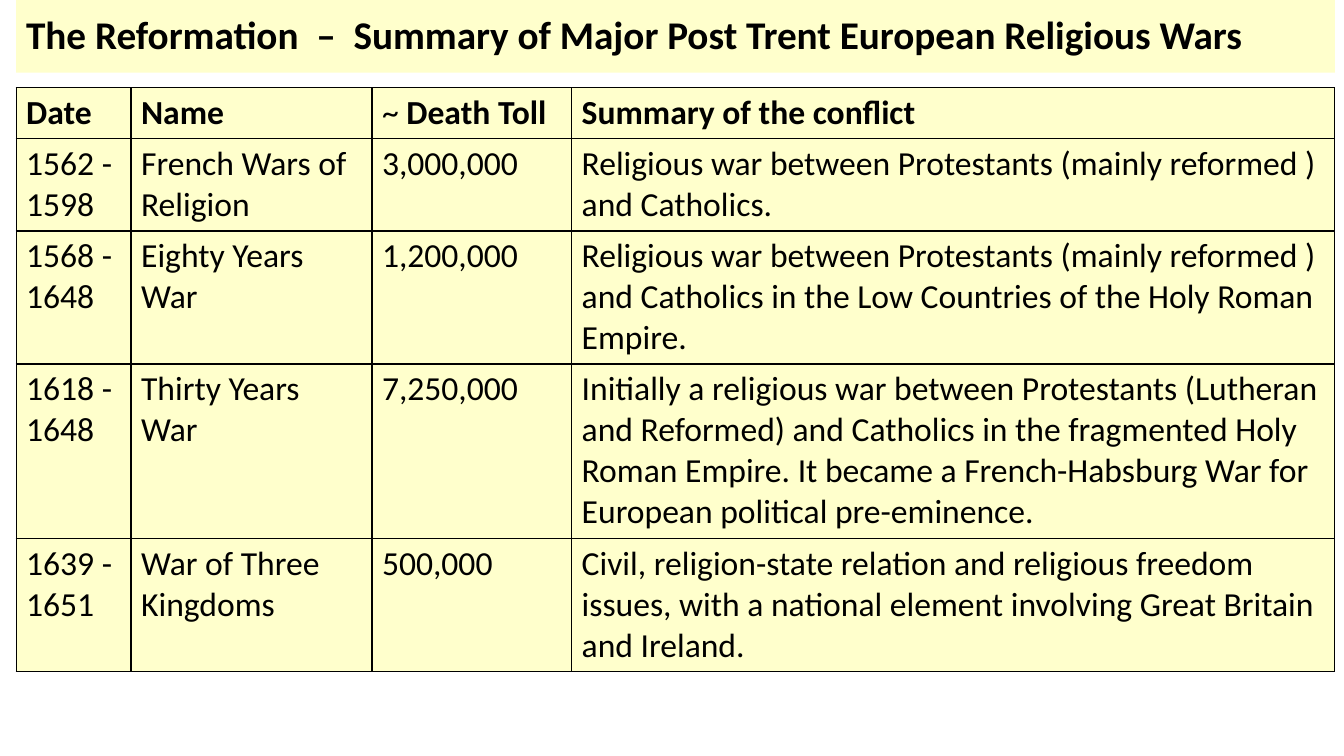
import pptx
import pptx.dml.color
import pptx.enum.shapes
import pptx.enum.text
import pptx.oxml.ns
import pptx.util
from lxml import etree

Inches = pptx.util.Inches
Pt = pptx.util.Pt
CREAM = pptx.dml.color.RGBColor(0xFF, 0xFF, 0xCC)
BLACK = pptx.dml.color.RGBColor(0, 0, 0)

LEFT, WIDTH = 0.16, 13.08
COLUMN_WIDTHS = [1.14, 2.39, 1.98, 7.57]
LINES_PER_ROW = [1, 2, 3, 4, 3]
LINE_HEIGHT, ROW_PADDING = 0.4, 0.1

HEADINGS = ["Date", "Name", "~ Death Toll", "Summary of the conflict"]
WARS = [
    ["1562 - 1598", "French Wars of Religion", "3,000,000",
     "Religious war between Protestants (mainly reformed ) and Catholics."],
    ["1568 - 1648", "Eighty Years War", "1,200,000",
     "Religious war between Protestants (mainly reformed ) and Catholics "
     "in the Low Countries of the Holy Roman Empire."],
    ["1618 - 1648", "Thirty Years War", "7,250,000",
     "Initially a religious war between Protestants (Lutheran and Reformed) "
     "and Catholics in the fragmented Holy Roman Empire. It became a "
     "French-Habsburg War for European political pre-eminence."],
    ["1639 - 1651", "War of Three Kingdoms", "500,000",
     "Civil, religion-state relation and religious freedom issues, with a "
     "national element involving Great Britain and Ireland."],
]


class SlideBuilder:
    font_name = "Calibri"
    title_size = 28
    table_size = 24

    def __init__(self, slide):
        self.slide = slide

    def style_run(self, run, size, bold):
        run.font.name = self.font_name
        run.font.size = Pt(size)
        run.font.bold = bold
        run.font.color.rgb = BLACK

    def title(self, text, left, top, width, height):
        banner = self.slide.shapes.add_shape(
            pptx.enum.shapes.MSO_SHAPE.RECTANGLE,
            Inches(left), Inches(top), Inches(width), Inches(height))
        banner.shadow.inherit = False
        banner.fill.solid()
        banner.fill.fore_color.rgb = CREAM
        banner.line.fill.background()
        frame = banner.text_frame
        frame.word_wrap = True
        frame.vertical_anchor = pptx.enum.text.MSO_ANCHOR.MIDDLE
        frame.text = text
        heading = frame.paragraphs[0]
        heading.alignment = pptx.enum.text.PP_ALIGN.LEFT
        heading.line_spacing = 0.9
        self.style_run(heading.runs[0], self.title_size, True)

    def border(self, cell):
        """Draw a 1 pt black line on all four sides of the cell."""
        properties = cell._tc.get_or_add_tcPr()
        qn = pptx.oxml.ns.qn
        for side in ("a:lnL", "a:lnR", "a:lnT", "a:lnB"):
            line = etree.SubElement(properties, qn(side), w=str(Pt(1)))
            fill = etree.SubElement(line, qn("a:solidFill"))
            etree.SubElement(fill, qn("a:srgbClr"), val=str(BLACK))

    def cell(self, cell, text, bold):
        """Fill one cell; a leading tilde always stays regular."""
        self.border(cell)
        cell.fill.solid()
        cell.fill.fore_color.rgb = CREAM
        paragraph = cell.text_frame.paragraphs[0]
        if text.startswith("~ "):
            tilde = paragraph.add_run()
            tilde.text = "~ "
            self.style_run(tilde, self.table_size, False)
            text = text[2:]
        run = paragraph.add_run()
        run.text = text
        self.style_run(run, self.table_size, bold)

    def table(self, rows, left, top, column_widths, row_heights):
        table = self.slide.shapes.add_table(
            len(rows), len(column_widths), Inches(left), Inches(top),
            Inches(sum(column_widths)), Inches(sum(row_heights))).table
        for column, width in zip(table.columns, column_widths):
            column.width = Inches(width)
        for row, height in zip(table.rows, row_heights):
            row.height = Inches(height)
        for r, texts in enumerate(rows):
            for c, text in enumerate(texts):
                self.cell(table.cell(r, c), text, bold=(r == 0))


def main():
    presentation = pptx.Presentation()
    presentation.slide_width = Inches(13.33)
    presentation.slide_height = Inches(7.5)
    builder = SlideBuilder(
        presentation.slides.add_slide(presentation.slide_layouts[6]))
    builder.title(
        "The Reformation  –  Summary of Major Post Trent European Religious Wars",
        LEFT, 0, WIDTH, 0.72)
    row_heights = [ROW_PADDING + LINE_HEIGHT * n for n in LINES_PER_ROW]
    builder.table([HEADINGS] + WARS, LEFT, 0.87, COLUMN_WIDTHS, row_heights)
    presentation.save("out.pptx")


if __name__ == "__main__":
    main()
